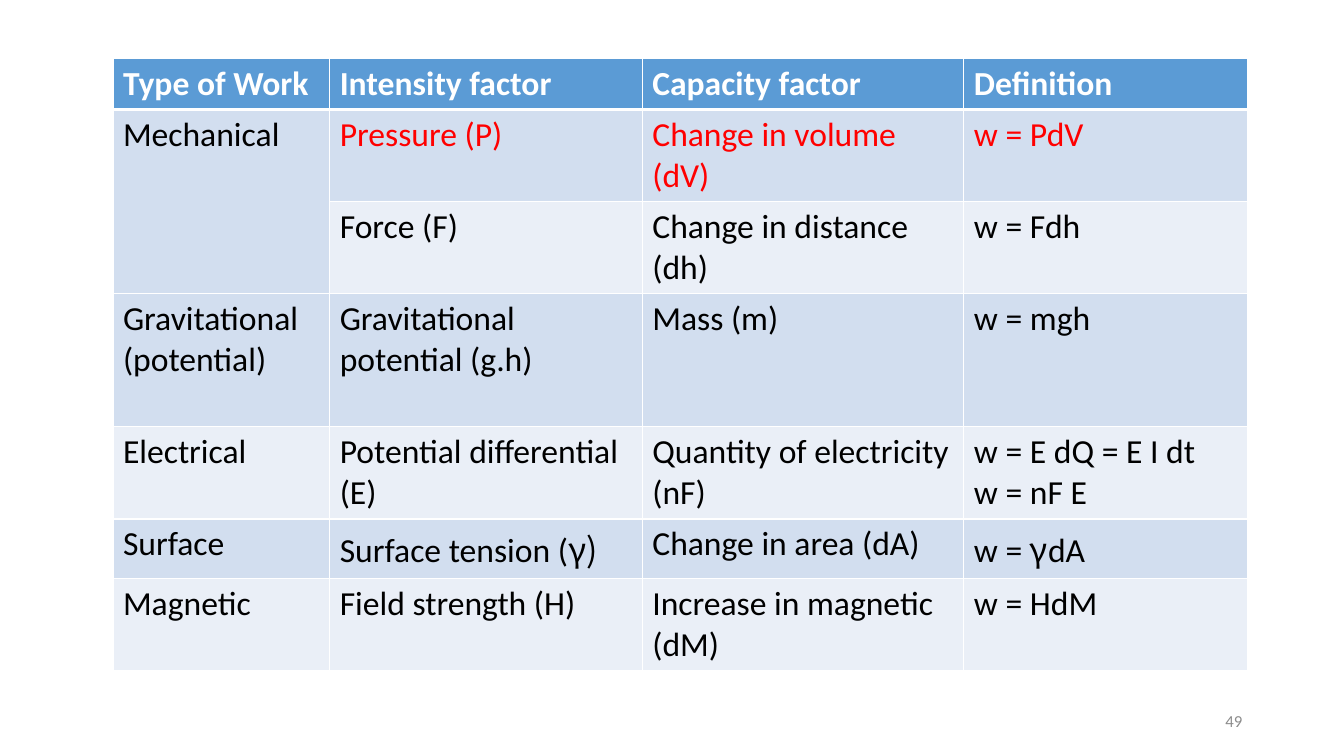
from lxml import etree
from pptx import Presentation
from pptx.dml.color import RGBColor
from pptx.enum import text
from pptx.oxml import ns
from pptx.util import Inches, Pt

# Content: a cell is a list of lines, a line is a list of runs
LATIN, GREEK = "Calibri", "Noto Sans CJK JP"
HEADINGS = ["Type of Work", "Intensity factor", "Capacity factor", "Definition"]
WORK_TYPES = [
    ["Mechanical", "Pressure (P)", "Change in volume (dV)", "w = PdV"],
    ["", "Force (F)", "Change in distance (dh)", "w = Fdh"],
    ["Gravitational (potential)", "Gravitational potential (g.h)", "Mass (m)", "w = mgh"],
    ["Electrical", "Potential differential (E)", "Quantity of electricity (nF)",
     [["w = E dQ = E I dt"], ["w = nF E"]]],
    ["Surface", [["Surface tension (", "γ)"]], "Change in area (dA)",
     [["w = ", "γ", "dA"]]],
    ["Magnetic", "Field strength (H)", "Increase in magnetic (dM)", "w = HdM"],
]
PAGE_NUMBER = "49"
COLUMN_WIDTHS = [2.15, 3.1, 3.19, 2.81]
ROW_HEIGHTS = [0.5, 0.91, 0.91, 1.32, 0.91, 0.59, 0.91]
HEADER_FILL, DARK_BAND, LIGHT_BAND = "5B9BD5", "D2DEEF", "EAEFF7"
BANDS = [HEADER_FILL, DARK_BAND, LIGHT_BAND, DARK_BAND, LIGHT_BAND, DARK_BAND, LIGHT_BAND]
WHITE, BLACK, RED, GREY = "FFFFFF", "000000", "FF0000", "8C8C8C"
HIGHLIGHT_ROW = 1


def rgb(value):
    return RGBColor.from_string(value)


def add_run(paragraph, wording, size, color, bold=False):
    run = paragraph.add_run()
    run.text = wording
    run.font.name = GREEK if "γ" in wording else LATIN
    run.font.size = Pt(size)
    run.font.bold = bold
    run.font.color.rgb = rgb(color)


def write_cell(cell, content, color, bold):
    lines = [[content]] if isinstance(content, str) else content
    for number, runs in enumerate(lines):
        frame = cell.text_frame
        paragraph = frame.add_paragraph() if number else frame.paragraphs[0]
        for wording in runs:
            add_run(paragraph, wording, 24, color, bold)


def set_borders(cell, bottom, top):
    properties = cell._tc.get_or_add_tcPr()
    sides = {"lnL": 1, "lnR": 1, "lnT": top, "lnB": bottom}
    for position, (side, width) in enumerate(sides.items()):
        line = etree.Element(ns.qn(f"a:{side}"), w=str(Pt(width)))
        fill = etree.SubElement(line, ns.qn("a:solidFill"))
        etree.SubElement(fill, ns.qn("a:srgbClr"), val=WHITE)
        properties.insert(position, line)


deck = Presentation()
deck.slide_width, deck.slide_height = Inches(13.33), Inches(7.5)
slide = deck.slides.add_slide(deck.slide_layouts[6])

# Table of work types
rows = [HEADINGS] + WORK_TYPES
work_table = slide.shapes.add_table(
    len(rows), len(HEADINGS), Inches(1.12), Inches(0.58),
    Inches(sum(COLUMN_WIDTHS)), Inches(sum(ROW_HEIGHTS))).table
for column, width in zip(work_table.columns, COLUMN_WIDTHS):
    column.width = Inches(width)
for row, height in zip(work_table.rows, ROW_HEIGHTS):
    row.height = Inches(height)

for r, contents in enumerate(rows):
    for c, content in enumerate(contents):
        cell = work_table.cell(r, c)
        cell.fill.solid()
        cell.fill.fore_color.rgb = rgb(BANDS[r])
        set_borders(cell, bottom=3 if r == 0 else 1, top=3 if r == 1 else 1)
        color = WHITE if r == 0 else RED if r == HIGHLIGHT_ROW and c else BLACK
        if content:
            write_cell(cell, content, color, bold=r == 0)

# Mechanical work covers two rows
work_table.cell(1, 0).merge(work_table.cell(2, 0))

# Page number
page_frame = slide.shapes.add_textbox(
    Inches(9.42), Inches(6.95), Inches(3), Inches(0.4)).text_frame
page_frame.word_wrap = True
page_frame.vertical_anchor = text.MSO_ANCHOR.MIDDLE
page_frame.paragraphs[0].alignment = text.PP_ALIGN.RIGHT
add_run(page_frame.paragraphs[0], PAGE_NUMBER, 12, GREY)

deck.save("out.pptx")
